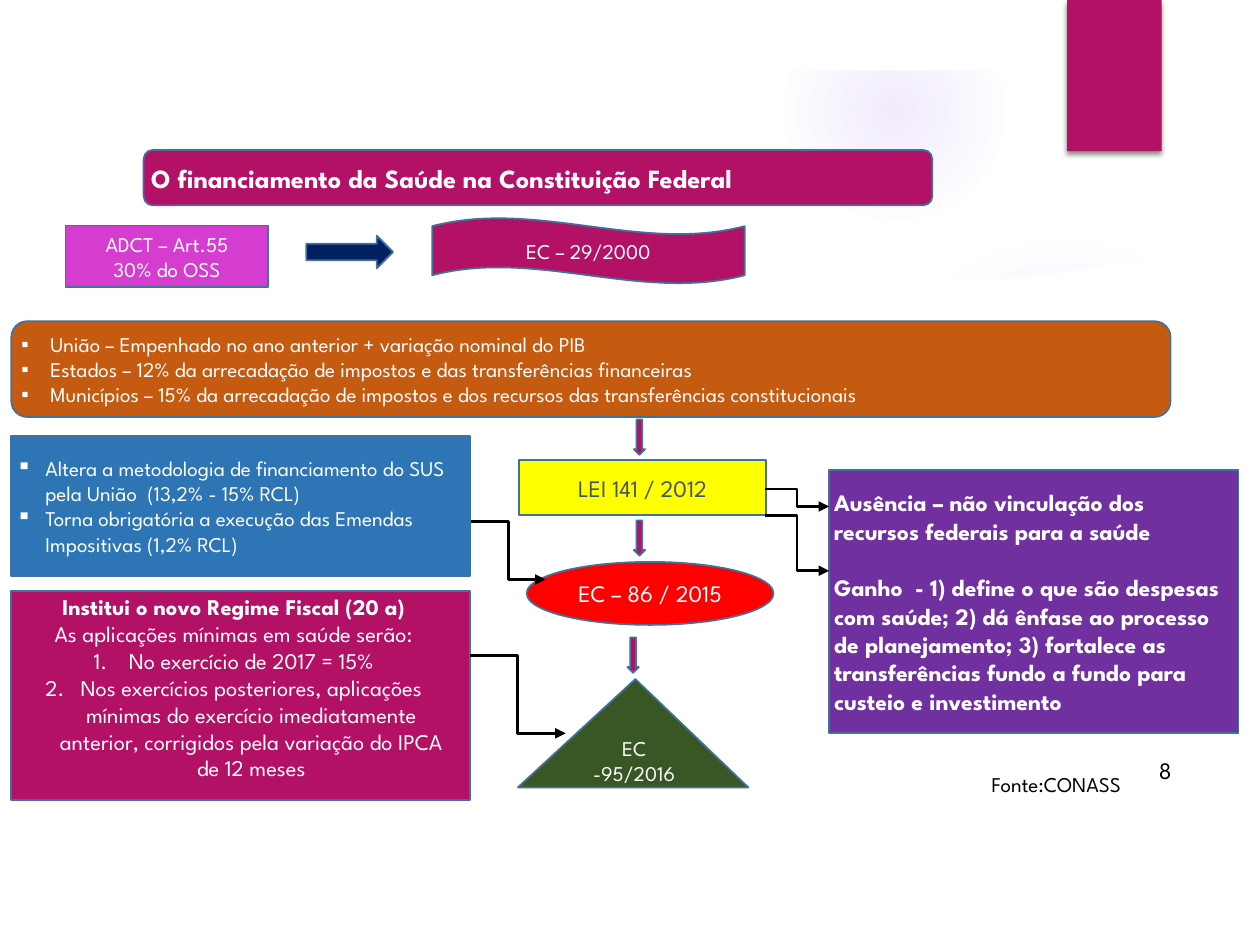
"""Build the slide on health financing in the Brazilian Federal Constitution."""
from lxml.etree import SubElement
from pptx import Presentation
from pptx.dml.color import RGBColor
from pptx.enum.shapes import MSO_CONNECTOR as CX, MSO_SHAPE as SH
from pptx.enum.text import MSO_ANCHOR as VA, MSO_AUTO_SIZE as FIT, PP_ALIGN as AL
from pptx.oxml import parse_xml
from pptx.oxml.ns import nsdecls, qn
from pptx.util import Inches, Pt

rgb = RGBColor.from_string
PINK, BLUE, WHITE, BLACK = "B31166", "42719B", "FFFFFF", "000000"

prs = Presentation()
prs.slide_width, prs.slide_height = Inches(10), Inches(7.5)
U = prs.slide_width / 100
s = prs.slides.add_slide(prs.slide_layouts[1])


def box(kind, x, y, w, h, fill, line=BLUE):
    sp = s.shapes.add_shape(kind, *(round(v * U) for v in (x, y, w, h)))
    sp.shadow.inherit = False
    sp.fill.solid()
    sp.fill.fore_color.rgb = rgb(fill)
    if line:
        sp.line.color.rgb = rgb(line)
        sp.line.width = Pt(1)
    else:
        sp.line.fill.background()
    return sp


def write(sp, text, size=12, color=WHITE, align=AL.CENTER, bold=0, bullet=None,
          plain=0, indent=0.23, gap=0, wrap=True, margins=(0.04, 0.04, 0.04, 0.04)):
    tf = sp.text_frame
    tf.word_wrap, tf.auto_size, tf.vertical_anchor = wrap, FIT.NONE, VA.MIDDLE
    tf.margin_left, tf.margin_top, tf.margin_right, tf.margin_bottom = map(Inches, margins)
    for i, words in enumerate(text.split("\n")):
        p = tf.add_paragraph() if i else tf.paragraphs[0]
        if bullet and i >= plain:
            pPr = p._p.get_or_add_pPr()
            pPr.set("marL", str(Inches(indent)))
            pPr.set("indent", str(-Inches(indent)))
            if bullet == "1.":
                SubElement(pPr, qn("a:buAutoNum"), type="arabicPeriod")
            else:
                SubElement(pPr, qn("a:buChar"), char=bullet)
        p.alignment = align
        p.space_before = Pt(gap if i else 0)
        r = p.add_run()
        r.text = words
        r.font.name, r.font.size, r.font.bold = "League Spartan", Pt(size), i < bold
        r.font.color.rgb = rgb(color)


for x, y, d, stops in [(68.9, 18.3, 30.8, ((0, 7), (36, 6), (69, 0))),
                       (62.2, 0, 17.5, ((0, 14), (36, 7), (73, 0)))]:
    glow = box(SH.OVAL, x, y, d, d, WHITE, None)
    steps = "".join(f'<a:gs pos="{at}000"><a:srgbClr val="9B6BF2"><a:alpha val="{a}000"/>'
                    "</a:srgbClr></a:gs>" for at, a in stops)
    solid = glow._element.spPr.find(qn("a:solidFill"))
    solid.getparent().replace(solid, parse_xml(
        f'<a:gradFill {nsdecls("a")}><a:gsLst>{steps}</a:gsLst><a:path path="circle">'
        '<a:fillToRect l="50000" t="50000" r="50000" b="50000"/></a:path></a:gradFill>'))

wave = [(22.2, 22.2), (37.1, 23.1), (51.1, 23.4), (66.4, 23.1), (82.5, 21.9), (94.7, 20.3)]
outline = s.shapes.build_freeform(5.3, 20.3, scale=U)
outline.add_line_segments(wave + [(94.7, 69.9), (5.3, 69.9)])
page = outline.convert_to_shape()
page.shadow.inherit = False
page.fill.solid()
page.fill.fore_color.rgb = rgb(WHITE)
page.line.fill.background()
box(SH.RECTANGLE, 0, 0, 100, 5.6, WHITE, None)
box(SH.RECTANGLE, 94.5, 5.6, 5.5, 69.4, WHITE, None)

tab = box(SH.RECTANGLE, 84.7, 0, 7.5, 12, PINK, None)
effects = tab._element.spPr.find(qn("a:effectLst"))
effects.append(parse_xml(
    f'<a:outerShdw {nsdecls("a")} blurRad="38100" dist="25400" dir="5400000" rotWithShape="0">'
    '<a:srgbClr val="000000"><a:alpha val="45000"/></a:srgbClr></a:outerShdw>'))

title, body = s.placeholders
panels = [
    (title, (11.4, 11.9, 62.6, 4.4), PINK, "O financiamento da Saúde na Constituição Federal",
     dict(size=15, bold=1, margins=(0.06, 0.04, 0.06, 0.04))),
    (body, (0.9, 25.5, 92, 7.6), "C55A11",
     "União – Empenhado no ano anterior + variação nominal do PIB\n"
     "Estados – 12% da arrecadação de impostos e das transferências financeiras\n"
     "Municípios – 15% da arrecadação de impostos e dos recursos das transferências constitucionais",
     dict(bullet="▪", margins=(0.08, 0.04, 0.08, 0.04))),
]
for sp, place, fill, text, look in panels:
    panel = box(SH.ROUNDED_RECTANGLE, *place, fill)
    sp.left, sp.top, sp.width, sp.height = panel.left, panel.top, panel.width, panel.height
    panel._element.addnext(sp._element)
    write(sp, text, align=AL.LEFT, **look)

boxes = [
    (SH.RECTANGLE, (5.2, 17.9, 16.1, 4.9), "D53DD0", "ADCT – Art.55\n30% do OSS", {}),
    (SH.WAVE, (34.3, 17.3, 24.8, 5.2), PINK, "EC – 29/2000", {}),
    (SH.RECTANGLE, (41.2, 36.5, 19.6, 4.4), "FFFF00", "LEI 141 / 2012",
     dict(size=13.5, color="44546A")),
    (SH.OVAL, (41.8, 44.6, 19.6, 5), "FF0000", "EC – 86 / 2015", dict(size=13.5)),
    (SH.ISOSCELES_TRIANGLE, (41.1, 53.9, 18.3, 8.6), "385724", "EC -95/2016", {}),
    (SH.RECTANGLE, (0.9, 34.6, 36.4, 11.1), "2E75B6",
     "Altera a metodologia de financiamento do SUS pela União  (13,2% - 15% RCL)\n"
     "Torna obrigatória a execução das Emendas Impositivas (1,2% RCL)",
     dict(align=AL.LEFT, bullet="▪")),
    (SH.RECTANGLE, (0.9, 46.9, 36.4, 16.6), PINK,
     "Institui o novo Regime Fiscal (20 a)\nAs aplicações mínimas em saúde serão:\n"
     "No exercício de 2017 = 15%\n"
     "Nos exercícios posteriores, aplicações mínimas do exercício imediatamente anterior, "
     "corrigidos pela variação do IPCA de 12 meses",
     dict(size=12.8, bold=1, bullet="1.", plain=2, indent=0.28, margins=(0.05, 0.04, 0.16, 0.17))),
    (SH.RECTANGLE, (65.8, 37.3, 32.5, 20.9), "7030A0",
     "Ausência – não vinculação dos recursos federais para a saúde\n"
     "Ganho  - 1) define o que são despesas com saúde; 2) dá ênfase ao processo de planejamento; "
     "3) fortalece as transferências fundo a fundo para custeio e investimento",
     dict(size=13.5, align=AL.LEFT, bold=2, gap=16.2)),
]
for kind, place, fill, text, look in boxes:
    sp = box(kind, *place, fill)
    if kind == SH.ISOSCELES_TRIANGLE:
        sp.adjustments[0] = 0.51
    write(sp, text, **look)

box(SH.RIGHT_ARROW, 24.3, 18.7, 6.9, 2.6, "002060")
for x, y in [(50.3, 33.3), (50.3, 41.3), (49.8, 50.6)]:
    box(SH.DOWN_ARROW, x, y, 0.9, 2.8, PINK)

for ends in [(60.7, 40.9, 65.8, 45.3), (60.7, 38.8, 65.8, 40.2),
             (37.3, 52, 44.9, 58.2), (37.4, 41.4, 43.3, 46)]:
    link = s.shapes.add_connector(CX.ELBOW, *(round(v * U) for v in ends))
    link.line.color.rgb = rgb(BLACK)
    link.line.width = Pt(1.5)
    SubElement(link.line._get_or_add_ln(), qn("a:tailEnd"), type="triangle")
    SubElement(link._element.spPr, qn("a:effectLst"))

for x, y, w, h, text, size, align in [(78.3, 60.7, 12.9, 3, "Fonte:CONASS", 12, AL.LEFT),
                                      (91.6, 59.5, 1.8, 3.3, "8", 13.5, AL.RIGHT)]:
    sp = s.shapes.add_textbox(*(round(v * U) for v in (x, y, w, h)))
    write(sp, text, size=size, color=BLACK, align=align, wrap=False)

prs.save("out.pptx")
